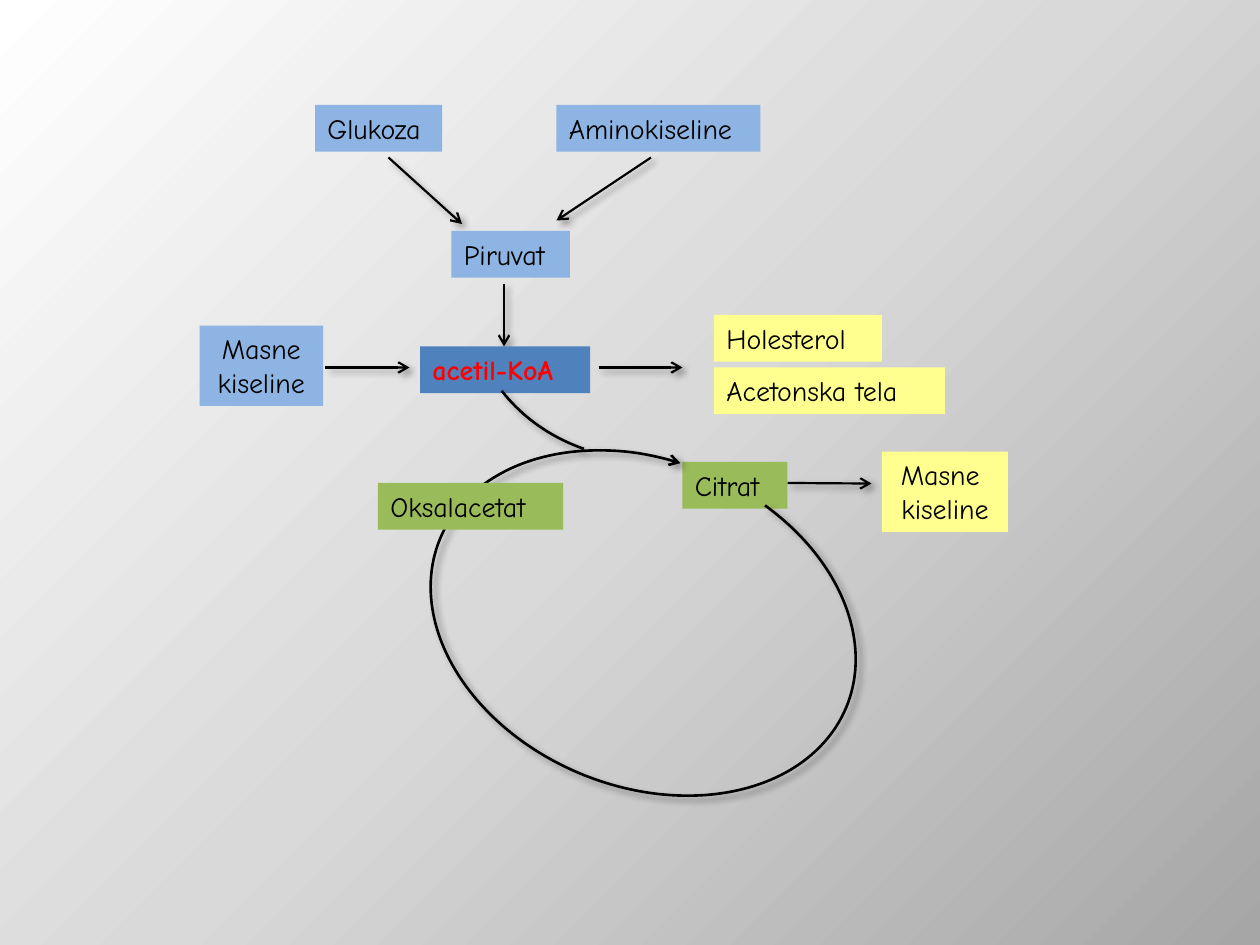
from copy import deepcopy
from typing import NamedTuple

from lxml import etree
from pptx import Presentation
from pptx.dml.color import RGBColor
from pptx.enum import shapes as kinds, text as txt
from pptx.oxml import ns
from pptx.util import Pt

FONT = "Comic Neue"
HEX = {"black": "000000", "red": "FF0000", "core": "4F81BD", "source": "8EB4E3",
       "product": "FFFF8F", "cycle": "9ABB59"}
BACK = [(0, "FFFFFF"), (0.5, "D9D9D9"), (1, "A6A6A6")]


class Box(NamedTuple):
    words: str
    left: float
    top: float
    width: float
    fill: str
    ink: str = "black"


class Line(NamedTuple):
    x1: float
    y1: float
    x2: float
    y2: float


class Arc(NamedTuple):
    left: float
    top: float
    width: float
    height: float
    start: float  # degrees, clockwise
    end: float
    arrow: bool


BOXES = [
    Box("acetil-KoA", 240, 198, 97.2, "core", "red"),
    Box("Glukoza", 180, 60, 72.7, "source"),
    Box("Aminokiseline", 318, 60, 116.6, "source"),
    Box("Piruvat", 258, 132, 67.7, "source"),
    Box("Masne\nkiseline", 114, 186, 70.6, "source"),
    Box("Holesterol", 408, 180, 96, "product"),
    Box("Acetonska tela", 408, 210, 132, "product"),
    Box("Masne \nkiseline", 504, 258, 72, "product"),
    Box("Citrat", 390, 264, 60, "cycle"),
]
LAST = Box("Oksalacetat", 216, 276, 105.8, "cycle")  # covers part of the cycle
LINES = [
    Line(222, 90, 264, 128), Line(372, 90, 318, 126), Line(288, 162, 288, 198),
    Line(186, 210, 234, 210), Line(342, 210, 390, 210), Line(450, 276, 498, 276.3),
]
ARCS = [
    Arc(241.9, 262.8, 251.3, 186.5, 293.52, 260.62, True),
    Arc(267.8, 112.3, 176.4, 147.6, 85.09, 129.26, False),
]


def rgb(name: str) -> RGBColor:
    return RGBColor.from_string(HEX[name])


def style(shape, width: float, arrow: bool) -> None:
    """Black stroke with a soft shadow and, if asked, an arrowhead."""
    shape.line.color.rgb = rgb("black")
    shape.line.width = Pt(width)
    props = shape._element.spPr
    if arrow:
        etree.SubElement(props.find(ns.qn("a:ln")), ns.qn("a:tailEnd"), type="arrow")
    fx = props.find(ns.qn("a:effectLst"))
    if fx is None:
        fx = etree.SubElement(props, ns.qn("a:effectLst"))
    shade = etree.SubElement(fx, ns.qn("a:outerShdw"), blurRad=str(Pt(4)),
                             dist=str(Pt(3)), dir="2700000", algn="tl", rotWithShape="0")
    tone = etree.SubElement(shade, ns.qn("a:srgbClr"), val=HEX["black"])
    etree.SubElement(tone, ns.qn("a:alpha"), val="40000")


def add_box(slide, box: Box) -> None:
    rows = box.words.split("\n")
    high = 26.7 if len(rows) == 1 else 46
    shape = slide.shapes.add_textbox(Pt(box.left), Pt(box.top), Pt(box.width), Pt(high))
    shape.fill.solid()
    shape.fill.fore_color.rgb = rgb(box.fill)
    frame = shape.text_frame
    frame.word_wrap = True
    frame.text = box.words
    for para in frame.paragraphs:
        if len(rows) > 1:
            para.alignment = txt.PP_ALIGN.CENTER
        font = para.font
        font.name, font.size = FONT, Pt(16)
        font.bold = box.fill == "core"
        font.color.rgb = rgb(box.ink)


def add_line(slide, line: Line) -> None:
    shape = slide.shapes.add_connector(kinds.MSO_CONNECTOR.STRAIGHT, *map(Pt, line))
    style(shape, 1.25, True)


def add_arc(slide, arc: Arc) -> None:
    shape = slide.shapes.add_shape(kinds.MSO_SHAPE.ARC, *map(Pt, arc[:4]))
    # Angles are kept in 60000ths of a degree, adjustments in 100000ths
    shape.adjustments[0] = arc.start * 0.6
    shape.adjustments[1] = arc.end * 0.6
    shape.rotation = 22.5
    shape.fill.background()
    shape.shadow.inherit = False
    style(shape, 1.5, arc.arrow)


def paint_back(slide) -> None:
    fill = slide.background.fill
    fill.gradient()
    fill.gradient_angle = 315
    stops = slide._element.find(".//" + ns.qn("a:gsLst"))
    stops.append(deepcopy(stops[-1]))
    for stop, (pos, tone) in zip(fill.gradient_stops, BACK):
        stop.position = pos
        stop.color.rgb = RGBColor.from_string(tone)


def main() -> None:
    deck = Presentation()
    deck.slide_width, deck.slide_height = Pt(720), Pt(540)
    slide = deck.slides.add_slide(deck.slide_layouts[6])
    paint_back(slide)

    # Pathway: arrows, substances, then the cycle
    for line in LINES:
        add_line(slide, line)
    for box in BOXES:
        add_box(slide, box)
    for arc in ARCS:
        add_arc(slide, arc)
    add_box(slide, LAST)
    deck.save("out.pptx")


if __name__ == "__main__":
    main()
